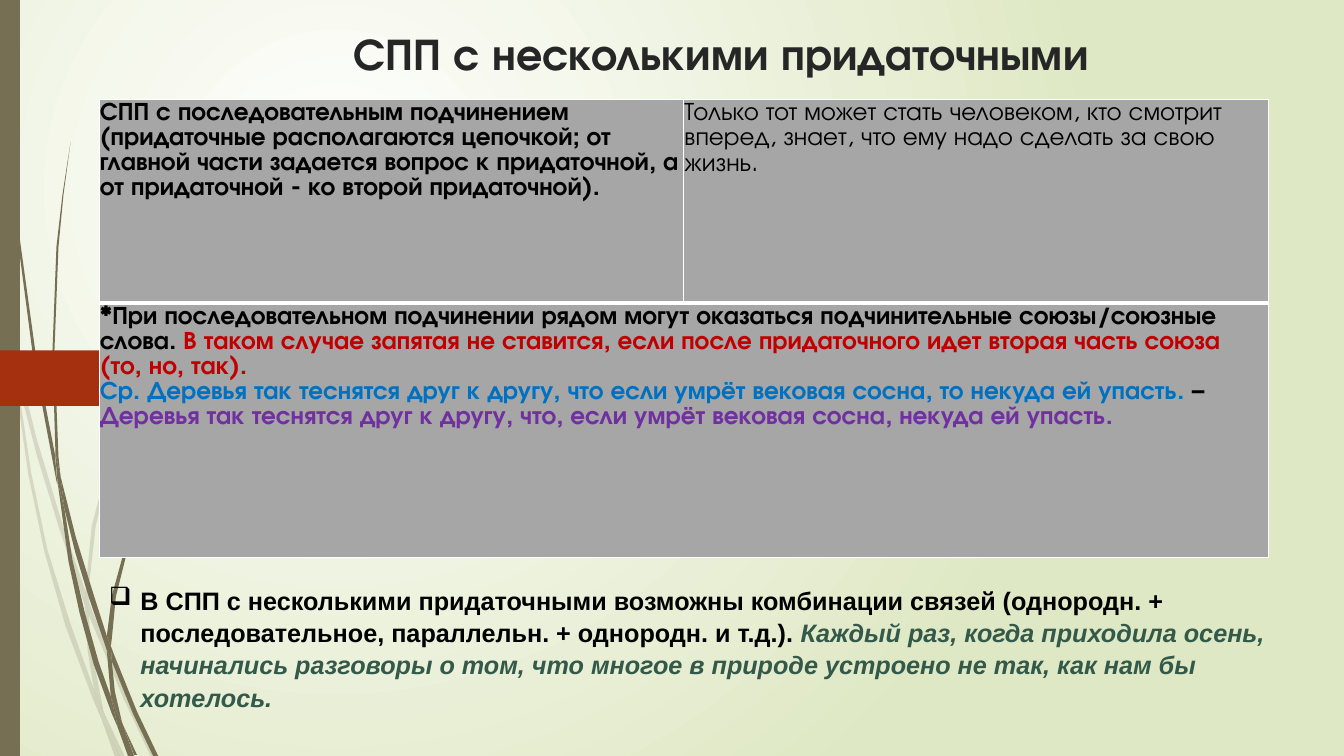
from dataclasses import dataclass
from typing import Optional

from lxml import etree
from pptx import Presentation
from pptx import util as u
from pptx.dml.color import RGBColor
from pptx.enum import shapes, text
from pptx.oxml.ns import qn

COLORS = {
    "white": "FFFFFF", "meadow": "DFE8C4", "bark": "766F54", "rust": "A53010",
    "heading": "262626", "cell": "A6A6A6", "black": "000000", "red": "C00000",
    "blue": "0070C0", "purple": "7030A0", "pine": "325949",
}
DISPLAY = "TeX Gyre Adventor"
UNIT = u.Cm(2.54) / 100


@dataclass(frozen=True)
class Span:
    words: str
    color: Optional[str] = None
    italic: Optional[bool] = None


@dataclass(frozen=True)
class Style:
    font: str
    size: int
    color: Optional[str] = "black"
    bold: bool = True
    spacing: Optional[float] = 1.07


@dataclass(frozen=True)
class Stalk:
    opacity: int
    blades: tuple


PALE_STALK = Stalk(20, (
    ((11, 350), (9, 322), (0, 282), (0, 299), (10, 344)),
    ((58, 522), (84, 600), (85, 587), (62, 520), (36, 434), (14, 345), (17, 376), (36, 450)),
    ((92, 607), (88, 596), (88, 610), (123, 694), (150, 751), (155, 751), (127, 692)),
    ((119, 751), (124, 751), (105, 711)),
    ((93, 683), (70, 619), (47, 545), (31, 469), (17, 376), (11, 350), (28, 470),
     (44, 547), (65, 621), (92, 693), (101, 714), (99, 707)),
    ((84, 599), (87, 646), (93, 683), (96, 692), (105, 712), (103, 707), (91, 646),
     (88, 610), (88, 608)),
    ((88, 584), (95, 522), (110, 462), (132, 405), (160, 349), (192, 296), (229, 245),
     (268, 198), (290, 175), (312, 154), (312, 153), (289, 175), (268, 197), (228, 244),
     (190, 295), (158, 348), (130, 403), (107, 461), (91, 522), (85, 584), (85, 586), (88, 596)),
    ((101, 714), (114, 751), (119, 751)),
    ((88, 608), (88, 610), (88, 596), (85, 586), (84, 599)),
    ((96, 692), (93, 683), (99, 707), (101, 714), (119, 751), (105, 711)),
))
DARK_STALK = Stalk(100, (
    ((7, 110), (17, 233), (33, 355), (56, 477), (57, 481), (55, 457), (55, 453),
     (36, 355), (19, 232), (8, 109), (5, 48), (4, 0), (3, 0), (4, 48)),
    ((88, 592), (106, 645), (106, 633), (106, 631), (93, 590), (75, 532), (60, 472),
     (64, 505), (75, 549)),
    ((113, 649), (110, 641), (111, 656), (132, 708), (152, 750), (157, 750), (136, 706)),
    ((110, 691), (98, 657), (84, 607), (72, 556), (64, 505), (57, 477), (68, 557),
     (79, 608), (93, 659), (111, 708), (117, 722), (116, 717)),
    ((60, 472), (58, 453), (54, 349), (58, 245), (63, 193), (70, 141), (62, 193),
     (56, 245), (52, 349), (55, 449)),
    ((133, 749), (136, 749), (122, 719)),
    ((57, 477), (64, 505), (60, 472), (55, 449), (55, 453)),
    ((111, 633), (115, 592), (125, 552), (140, 513), (158, 476), (180, 440), (205, 406),
     (231, 374), (245, 359), (261, 344), (260, 344), (245, 358), (231, 373), (204, 405),
     (179, 439), (156, 474), (137, 512), (122, 551), (111, 591), (106, 631), (110, 641)),
    ((117, 722), (127, 750), (131, 750)),
    ((106, 645), (110, 691), (116, 706), (122, 719), (121, 716), (114, 686), (111, 656), (109, 651)),
    ((106, 645), (109, 651), (111, 656), (110, 641), (106, 631), (106, 633)),
    ((116, 706), (110, 691), (116, 717), (117, 722), (130, 750), (133, 750), (122, 719)),
))

TITLE = Style(DISPLAY, 32, "heading", spacing=None)
RULE = Style(DISPLAY, 18)
EXAMPLE = Style(DISPLAY, 18, bold=False)
PUNCTUATION = Style(DISPLAY, 18, None)
COMBINATION = Style("Arial", 18, None)

CHAIN_RULE = (Span(
    "СПП с последовательным подчинением\n(придаточные располагаются цепочкой; от главной "
    "части задается вопрос к придаточной, а от придаточной - ко второй придаточной)."),)
CHAIN_EXAMPLE = (Span(
    "Только тот может стать человеком, кто смотрит вперед, знает, что ему надо сделать "
    "за свою жизнь."),)
COMMA_RULE = (
    Span("*При последовательном подчинении рядом могут оказаться подчинительные "
         "союзы/союзные слова. ", "black"),
    Span("В таком случае запятая не ставится, если после придаточного идет вторая часть "
         "союза (то, но, так).\n", "red"),
    Span("Ср. Деревья так теснятся друг к другу, что если умрёт вековая сосна, "
         "то некуда ей упасть.", "blue"),
    Span(" –", "black"),
    Span(" Деревья так теснятся друг к другу, что, если умрёт вековая сосна, "
         "некуда ей упасть.", "purple"),
)
MIXED_LINKS = (
    Span("В СПП с несколькими придаточными возможны комбинации связей (однородн. + "
         "последовательное, параллельн. + однородн. и т.д.). ", "black"),
    Span("Каждый раз, когда приходила осень, начинались разговоры о том, что многое в "
         "природе устроено не так, как нам бы хотелось.", "pine", True),
)


def rgb(name: str) -> RGBColor:
    return RGBColor.from_string(COLORS[name])


def paint(shape, color: str, opacity: int = 100) -> None:
    shape.shadow.inherit = False
    shape.fill.solid()
    shape.fill.fore_color.rgb = rgb(color)
    shape.line.fill.background()
    if opacity < 100:
        tint = shape.element.spPr.find(qn("a:solidFill"))[0]
        etree.SubElement(tint, qn("a:alpha"), val=str(opacity * 1000))


def write(paragraph, spans: tuple, style: Style) -> None:
    if style.spacing:
        paragraph.line_spacing = style.spacing
    paragraph.font.name = style.font
    paragraph.font.size = u.Pt(style.size)
    paragraph.font.bold = style.bold
    if style.color:
        paragraph.font.color.rgb = rgb(style.color)
    for span in spans:
        for number, line in enumerate(span.words.split("\n")):
            if number:
                paragraph.add_line_break()
            if line:
                run = paragraph.add_run()
                run.text = line
                if span.color:
                    run.font.color.rgb = rgb(span.color)
                if span.italic:
                    run.font.italic = True


def draw_background(slide) -> None:
    fill = slide.background.fill
    fill.gradient()
    for stop, color in zip(fill.gradient_stops, ("white", "meadow")):
        stop.color.rgb = rgb(color)
    fill.gradient_stops[0].position, fill.gradient_stops[1].position = 0, 1
    gradient = next(slide.element.iter(qn("a:gradFill")))
    linear = gradient.find(qn("a:lin"))
    circle = etree.Element(qn("a:path"), path="circle")
    etree.SubElement(circle, qn("a:fillToRect"), l="50000", t="50000", r="100000", b="100000")
    gradient.replace(linear, circle)


def draw_stalk(slide, stalk: Stalk) -> None:
    group = slide.shapes.add_group_shape()
    for start, *rest in stalk.blades:
        outline = group.shapes.build_freeform(*start, scale=UNIT)
        outline.add_line_segments(rest, close=True)
        paint(outline.convert_to_shape(), "bark", stalk.opacity)


def fill_cell(cell, spans: tuple, style: Style) -> None:
    cell.margin_left = cell.margin_right = cell.margin_top = cell.margin_bottom = u.Cm(0.02)
    write(cell.text_frame.paragraphs[0], spans, style)


def frame_cell(cell, bottom: int) -> None:
    cell.fill.solid()
    cell.fill.fore_color.rgb = rgb("cell")
    properties = cell._tc.get_or_add_tcPr()
    for place, (side, width) in enumerate((("L", 1), ("R", 1), ("T", 1), ("B", bottom))):
        border = etree.Element(qn(f"a:ln{side}"), w=str(u.Pt(width)))
        solid = etree.SubElement(border, qn("a:solidFill"))
        etree.SubElement(solid, qn("a:srgbClr"), val=COLORS["white"])
        properties.insert(place, border)


def draw_rules(slide) -> None:
    table = slide.shapes.add_table(2, 2, u.Cm(2.5), u.Cm(2.51), u.Cm(29.46), u.Cm(11.53)).table
    table.first_row = table.horz_banding = False
    for row, height, bottom in zip(table.rows, (5.13, 6.4), (3, 1)):
        row.height = u.Cm(height)
        for cell in row.cells:
            frame_cell(cell, bottom)
    table.cell(1, 0).merge(table.cell(1, 1))
    fill_cell(table.cell(0, 0), CHAIN_RULE, RULE)
    fill_cell(table.cell(0, 1), CHAIN_EXAMPLE, EXAMPLE)
    fill_cell(table.cell(1, 0), COMMA_RULE, PUNCTUATION)


def main() -> None:
    deck = Presentation()
    deck.slide_width, deck.slide_height = u.Cm(33.87), u.Cm(19.05)
    slide = deck.slides.add_slide(deck.slide_layouts[6])
    draw_background(slide)
    for stalk in (PALE_STALK, DARK_STALK):
        draw_stalk(slide, stalk)
    preset = shapes.MSO_SHAPE
    trunk = slide.shapes.add_shape(preset.RECTANGLE, 0, 0, u.Cm(0.5), deck.slide_height)
    paint(trunk, "bark")
    marker = slide.shapes.add_shape(preset.PENTAGON, 0, u.Cm(8.83), u.Cm(4.41), u.Cm(1.4))
    paint(marker, "rust")

    title = slide.shapes.add_textbox(u.Cm(4.41), u.Cm(0.5), u.Cm(27.54), u.Cm(1.64)).text_frame
    title.word_wrap = True
    title.vertical_anchor = text.MSO_ANCHOR.BOTTOM
    title.paragraphs[0].alignment = text.PP_ALIGN.CENTER
    write(title.paragraphs[0], (Span("СПП с несколькими придаточными"),), TITLE)

    draw_rules(slide)

    note = slide.shapes.add_textbox(u.Cm(2.5), u.Cm(14.56), u.Cm(29.84), u.Cm(3.5)).text_frame
    note.word_wrap = True
    note.auto_size = text.MSO_AUTO_SIZE.SHAPE_TO_FIT_TEXT
    remark = note.paragraphs[0]
    indent = u.Cm(0.79)
    properties = remark._p.get_or_add_pPr()
    properties.set("marL", str(indent))
    properties.set("indent", str(-indent))
    etree.SubElement(properties, qn("a:buChar"), char="❑")
    remark.space_after = u.Pt(8)
    write(remark, MIXED_LINKS, COMBINATION)
    deck.save("out.pptx")


if __name__ == "__main__":
    main()
